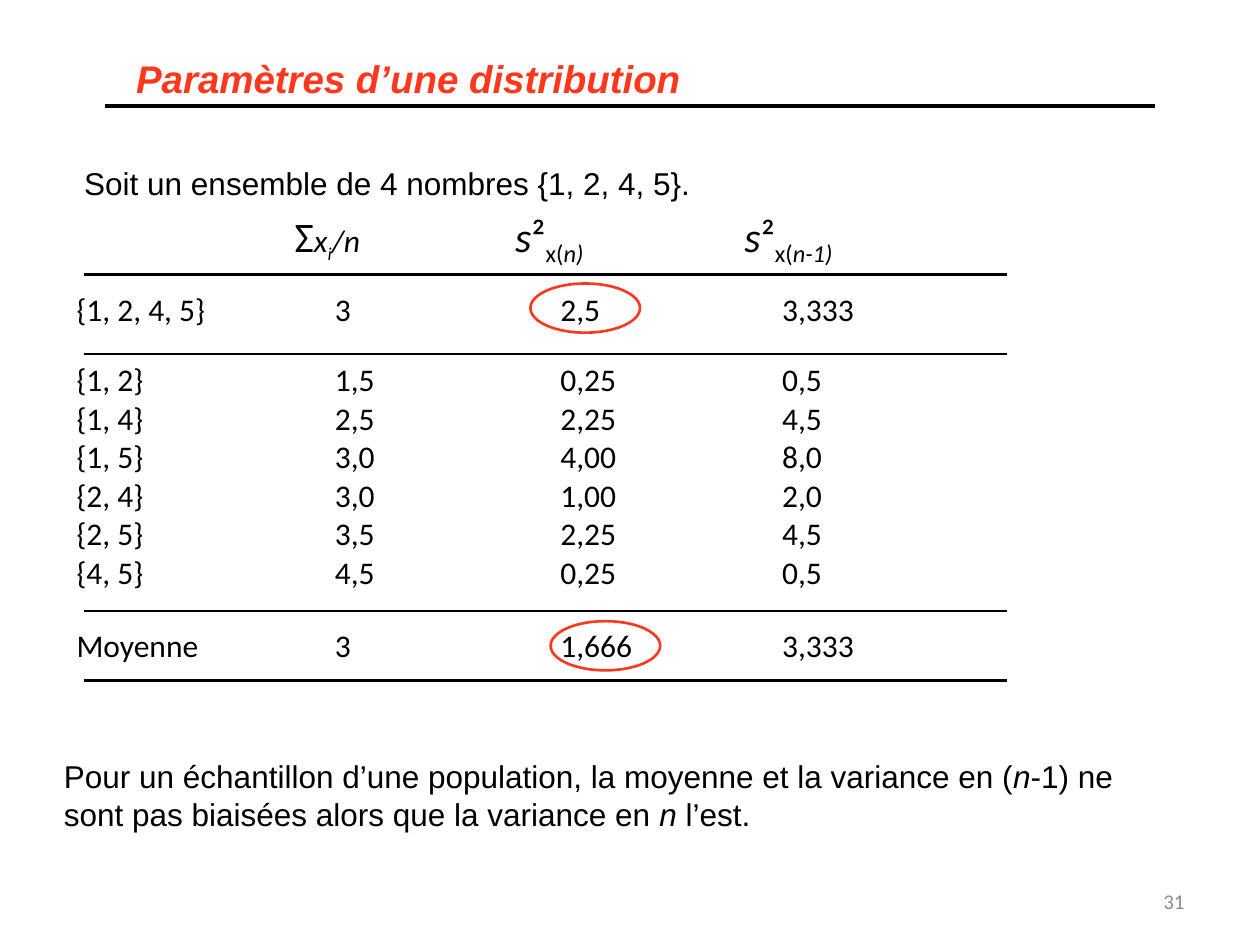
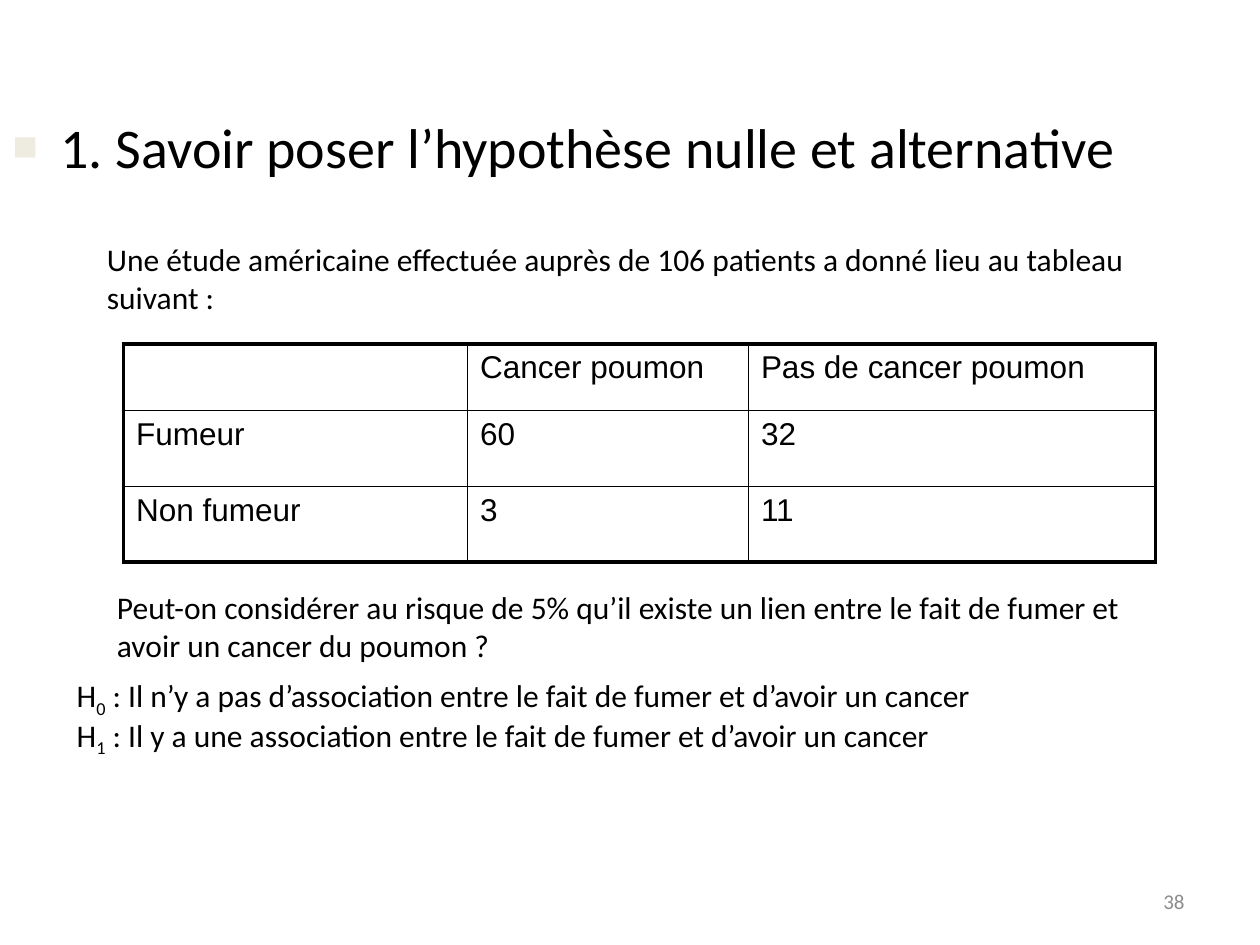
"""Builds two statistics slides: distribution parameters and hypothesis testing."""
from lxml.etree import SubElement
from pptx import Presentation
from pptx.dml.color import RGBColor
from pptx.enum.shapes import MSO_CONNECTOR, MSO_SHAPE
from pptx.enum.text import MSO_ANCHOR, PP_ALIGN
from pptx.oxml.ns import qn
from pptx.util import Inches, Pt

COLORS = {"ink": "000000", "accent": "FF381D", "number": "8C8C8C", "bullet": "EEECE1"}
ITALIC = {"italic": True}
SUB = {"sub": True}
SUB_ITALIC = {"sub": True, "italic": True}


def color(name):
    """Return a palette colour."""
    return RGBColor.from_string(COLORS[name])


def write(frame, runs, size=18, font="Calibri", ink="ink", bold=False,
          align=PP_ALIGN.LEFT, anchor=MSO_ANCHOR.TOP, before=0):
    """Write a string, or (text, format) runs, as the one paragraph of a frame."""
    frame.word_wrap = True
    frame.vertical_anchor = anchor
    paragraph = frame.paragraphs[0]
    paragraph.alignment = align
    paragraph.space_before = Pt(before)
    for words, style in [(runs, {})] if isinstance(runs, str) else runs:
        run = paragraph.add_run()
        run.text = words
        run.font.name = font
        run.font.size = Pt(style.get("size", size))
        run.font.bold = bold
        run.font.italic = style.get("italic", False)
        run.font.color.rgb = color(ink)
        if style.get("sub"):
            run.font._element.set("baseline", "-25000")
    return paragraph


def add_text(slide, box, runs, **style):
    """Add a text box."""
    write(slide.shapes.add_textbox(*map(Inches, box)).text_frame, runs, **style)


def add_title(slide, box, runs, **style):
    """Place and fill the title placeholder."""
    title = slide.shapes.title
    title.left, title.top, title.width, title.height = map(Inches, box)
    return write(title.text_frame, runs, **style)


def add_bullet(paragraph, char, indent):
    """Give a paragraph a hanging coloured bullet."""
    props = paragraph._p.get_or_add_pPr()
    props.set("marL", str(Inches(indent)))
    props.set("indent", str(-Inches(indent)))
    tint = SubElement(props, qn("a:buClr"))
    SubElement(tint, qn("a:srgbClr"), val=COLORS["bullet"])
    SubElement(props, qn("a:buSzPct"), val="75000")
    SubElement(props, qn("a:buFont"), typeface="Arial")
    SubElement(props, qn("a:buChar"), char=char)


def add_rule(slide, left, right, top, weight=1.5):
    """Draw a horizontal line."""
    rule = slide.shapes.add_connector(
        MSO_CONNECTOR.STRAIGHT, Inches(left), Inches(top), Inches(right), Inches(top))
    rule.line.color.rgb = color("ink")
    rule.line.width = Pt(weight)
    SubElement(rule._element.spPr, qn("a:effectLst"))


def add_ring(slide, left, top):
    """Circle a value."""
    ring = slide.shapes.add_shape(
        MSO_SHAPE.OVAL, Inches(left), Inches(top), Inches(0.87), Inches(0.39))
    ring.shadow.inherit = False
    ring.fill.background()
    ring.line.color.rgb = color("accent")
    ring.line.width = Pt(1.5)


def add_page_number(slide, number):
    """Write the page number at the lower right."""
    add_text(slide, (7.17, 6.95, 2.33, 0.4), number, size=12, ink="number",
             align=PP_ALIGN.RIGHT, anchor=MSO_ANCHOR.MIDDLE)


def set_border(cell, side, weight):
    """Draw one side of a cell."""
    edge = SubElement(cell._tc.get_or_add_tcPr(), qn(f"a:ln{side}"), w=str(Pt(weight)))
    fill = SubElement(edge, qn("a:solidFill"))
    SubElement(fill, qn("a:srgbClr"), val=COLORS["ink"])


def add_framed_table(slide, box, rows, widths, heights):
    """Add a table with a thick frame and thin inner lines."""
    table = slide.shapes.add_table(len(rows), len(widths), *map(Inches, box)).table
    table.first_row = table.horz_banding = False
    for column, width in zip(table.columns, widths):
        column.width = Inches(width)
    last_row, last_column = len(rows) - 1, len(widths) - 1
    for r, (row, height) in enumerate(zip(rows, heights)):
        table.rows[r].height = Inches(height)
        for c, words in enumerate(row):
            cell = table.cell(r, c)
            outer = {"L": c == 0, "R": c == last_column, "T": r == 0, "B": r == last_row}
            for side, framed in outer.items():
                set_border(cell, side, 2.25 if framed else 1)
            cell.fill.background()
            if words:
                write(cell.text_frame, words, font="Arial", before=3.6)


def add_value_row(slide, top, values):
    """Write one row of the samples overview."""
    columns = [(0.51, 1.34), (2.56, 0.6), (4.35, 0.83), (6.11, 0.83)]
    for (left, width), value in zip(columns, values):
        add_text(slide, (left, top, width, 0.4), value)


def build_distribution(slide):
    """Compare the variances of all samples of two numbers."""
    add_title(slide, (0.98, 0.39, 4.62, 0.47), "Paramètres d’une distribution",
              size=22, font="Arial", ink="accent", bold=True).runs[0].font.italic = True
    add_rule(slide, 0.83, 9.17, 0.84, 2.25)
    add_text(slide, (0.57, 1.25, 5.08, 0.4),
             "Soit un ensemble de 4 nombres {1, 2, 4, 5}.", font="Arial")

    add_text(slide, (2.24, 1.62, 0.78, 0.5),
             [("Σ", {"size": 24}), ("x", ITALIC), ("i", SUB_ITALIC), ("/n", ITALIC)])
    for left, width, divisor in [(3.99, 0.92, "n)"), (5.81, 1.55, "n-1)")]:
        add_text(slide, (left, 1.62, width, 0.5),
                 [("s", ITALIC), ("²", {}), ("x(", SUB), (divisor, SUB_ITALIC)], size=24)

    samples = [
        ("{1, 2}", "1,5", "0,25", "0,5"),
        ("{1, 4}", "2,5", "2,25", "4,5"),
        ("{1, 5}", "3,0", "4,00", "8,0"),
        ("{2, 4}", "3,0", "1,00", "2,0"),
        ("{2, 5}", "3,5", "2,25", "4,5"),
        ("{4, 5}", "4,5", "0,25", "0,5"),
    ]
    add_value_row(slide, 2.25, ("{1, 2, 4, 5}", "3", "2,5", "3,333"))
    for i, sample in enumerate(samples):
        add_value_row(slide, 2.81 + i * 1.53 / 5, sample)
    add_value_row(slide, 4.92, ("Moyenne", "3", "1,666", "3,333"))
    for top in (2.18, 2.81, 4.85, 5.4):
        add_rule(slide, 0.67, 7.99, top)
    add_ring(slide, 4.21, 2.25)
    add_ring(slide, 4.37, 4.93)

    add_text(slide, (0.41, 5.96, 8.76, 0.7), [
        ("Pour un échantillon d’une population, la moyenne et la variance en (", {}),
        ("n", ITALIC),
        ("-1) ne sont pas biaisées alors que la variance en ", {}),
        ("n ", ITALIC),
        ("l’est.", {}),
    ], font="Arial")
    add_page_number(slide, "31")


def build_hypotheses(slide):
    """State the null and alternative hypotheses of a smoking study."""
    heading = add_title(slide, (0, 0.84, 10, 0.79),
                        "1. Savoir poser l’hypothèse nulle et alternative",
                        size=32, before=6.4)
    add_bullet(heading, "■", 0.38)
    add_text(slide, (0.75, 1.86, 8.74, 0.7),
             "Une étude américaine effectuée auprès de 106 patients a donné lieu "
             "au tableau suivant :")
    add_framed_table(slide, (0.98, 2.73, 8.19, 1.73), [
        ("", "Cancer poumon", "Pas de cancer poumon"),
        ("Fumeur", "60", "32"),
        ("Non fumeur", "3", "11"),
    ], widths=(2.73, 2.23, 3.23), heights=(0.53, 0.6, 0.6))
    add_text(slide, (0.83, 4.62, 8.58, 0.7),
             "Peut-on considérer au risque de 5% qu’il existe un lien entre le fait "
             "de fumer et avoir un cancer du poumon ?")
    hypotheses = [
        (5.32, "0", "Il n’y a pas d’association"),
        (5.63, "1", "Il y a une association"),
    ]
    for top, index, claim in hypotheses:
        add_text(slide, (0.51, top, 8.58, 0.4), [
            ("H", {}), (index, SUB),
            (f" : {claim} entre le fait de fumer et d’avoir un cancer", {})])
    add_page_number(slide, "38")


def main():
    """Build and save the presentation."""
    deck = Presentation()
    deck.slide_width, deck.slide_height = Inches(10), Inches(7.5)
    title_only = deck.slide_layouts[5]
    for build in (build_distribution, build_hypotheses):
        build(deck.slides.add_slide(title_only))
    deck.save("out.pptx")


if __name__ == "__main__":
    main()
